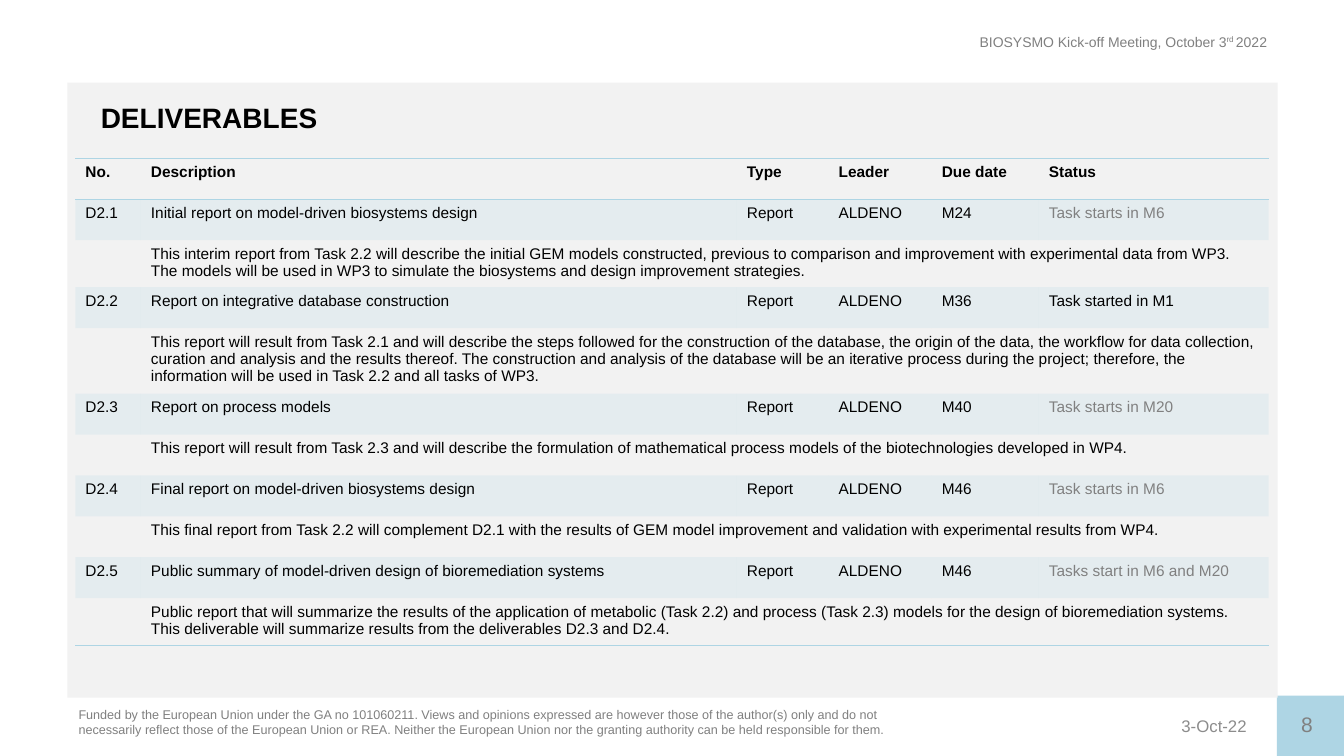
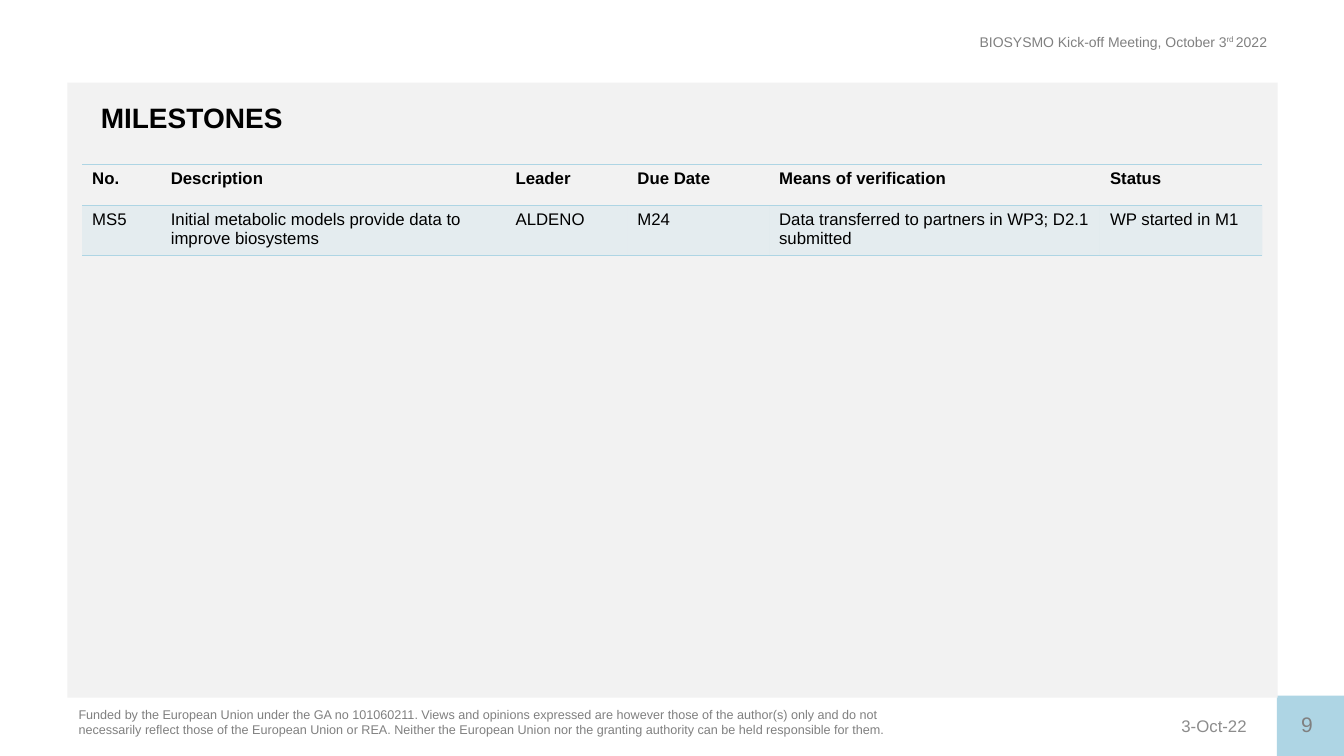
from lxml import etree
from pptx import Presentation
from pptx import util as u
from pptx.dml.color import RGBColor
from pptx.enum import shapes, text
from pptx.oxml.ns import qn

BLUE, PALE, GREY, SOFT, BLACK = "AED5E4", "F2F2F2", "808080", "8C8C8C", "000000"
FONT = "Arial"
PLAIN = "{2D5ABB26-0587-4C30-8999-92F81FD0307C}"  # table style without grid
EVENT = ("BIOSYSMO Kick-off Meeting, October 3", "rd ", "2022")
DATE = "3-Oct-22"
FUND = (
    "Funded by the European Union under the GA no 101060211. Views and opinions "
    "expressed are however those of the author(s) only and do not necessarily "
    "reflect those of the European Union or REA. Neither the European Union nor "
    "the granting authority can be held responsible for them."
)
LEAD = "ALDENO"


def tint(code):
    return RGBColor.from_string(code)


class Deck:
    def __init__(self):
        self.show = Presentation()
        self.show.slide_width = u.Cm(33.87)
        self.show.slide_height = u.Cm(19.05)
        self.slide = None

    # Shared frame: header, footer, panel, title and page number
    def page(self, title, number):
        self.slide = self.show.slides.add_slide(self.show.slide_layouts[6])
        right = text.PP_ALIGN.RIGHT
        head = self.text((20.93, 0.71, 11.25, 0.68), EVENT, 10, GREY, align=right)
        head.runs[1]._r.get_or_add_rPr().set("baseline", "30000")
        self.text((20.24, 17.78, 11.43, 1.02), [DATE], 12, SOFT, align=right,
                  anchor=text.MSO_ANCHOR.MIDDLE)
        self.rect((32.18, 17.53, 1.69, 1.54), BLUE)
        self.text((1.73, 17.68, 21.46, 1.02), [FUND], 9, GREY)
        self.rect((1.7, 2.08, 30.5, 15.5), PALE)
        self.text((2.29, 2.41, 7.59, 1.12), [title], 20, BLACK, bold=True)
        self.text((32.54, 17.81, 1.17, 0.89), [str(number)], 15, GREY, wrap=False)

    def rect(self, box, fill):
        shape = self.slide.shapes.add_shape(
            shapes.MSO_SHAPE.RECTANGLE, *map(u.Cm, box))
        shape.shadow.inherit = False
        shape.fill.solid()
        shape.fill.fore_color.rgb = tint(fill)
        shape.line.fill.background()

    def text(self, box, parts, size, color, bold=False, align=text.PP_ALIGN.LEFT,
             anchor=text.MSO_ANCHOR.TOP, wrap=True):
        frame = self.slide.shapes.add_textbox(*map(u.Cm, box)).text_frame
        frame.word_wrap = wrap
        frame.vertical_anchor = anchor
        para = frame.paragraphs[0]
        para.alignment = align
        for part in parts:
            para.add_run().text = part
        self.style(para, size, color, bold)
        return para

    def style(self, para, size, color, bold):
        for run in para.runs:
            font = run.font
            font.name, font.size, font.bold = FONT, u.Pt(size), bold
            font.color.rgb = tint(color)

    # A row with two entries spans its second one to the right edge
    def table(self, left, top, cols, rows, size, muted=()):
        high = 1.03
        frame = self.slide.shapes.add_table(
            len(rows), len(cols), u.Cm(left), u.Cm(top),
            u.Cm(sum(cols)), u.Cm(high * len(rows)))
        grid = frame.table
        grid.horz_banding = False
        grid._tbl.tblPr.find(qn("a:tableStyleId")).text = PLAIN
        for col, width in zip(grid.columns, cols):
            col.width = u.Cm(width)
        for i, row in enumerate(rows):
            grid.rows[i].height = u.Cm(high)
            full = len(row) == len(cols)
            if not full:
                grid.cell(i, 1).merge(grid.cell(i, len(cols) - 1))
            for j, words in enumerate(row):
                cell = grid.cell(i, j)
                cell.text_frame.text = words
                self.style(cell.text_frame.paragraphs[0], size,
                           GREY if words in muted else BLACK, i == 0)
            sides = ["lnT", "lnB"] if i == 0 else ["lnB"] if i == len(rows) - 1 else []
            for cell in grid.rows[i].cells:
                self.shade(cell, full and i > 0)
                self.edge(cell, sides)

    def shade(self, cell, band):
        if not band:
            cell.fill.background()
            return
        cell.fill.solid()
        cell.fill.fore_color.rgb = tint(BLUE)
        code = cell._tc.tcPr.find(qn("a:solidFill"))[0]
        etree.SubElement(code, qn("a:alpha"), val="20000")

    def edge(self, cell, sides):
        props = cell._tc.get_or_add_tcPr()
        for k, side in enumerate(sides):
            line = etree.Element(qn("a:" + side), w=str(u.Pt(1)))
            fill = etree.SubElement(line, qn("a:solidFill"))
            etree.SubElement(fill, qn("a:srgbClr"), val=BLUE)
            props.insert(k, line)


# Deliverables: title, due date, status, summary
ITEMS = [
    ("Initial report on model-driven biosystems design", "M24", "Task starts in M6",
     "This interim report from Task 2.2 will describe the initial GEM models "
     "constructed, previous to comparison and improvement with experimental data "
     "from WP3. The models will be used in WP3 to simulate the biosystems and "
     "design improvement strategies."),
    ("Report on integrative database construction", "M36", "Task started in M1",
     "This report will result from Task 2.1 and will describe the steps followed "
     "for the construction of the database, the origin of the data, the workflow "
     "for data collection, curation and analysis and the results thereof. The "
     "construction and analysis of the database will be an iterative process "
     "during the project; therefore, the information will be used in Task 2.2 and "
     "all tasks of WP3."),
    ("Report on process models", "M40", "Task starts in M20",
     "This report will result from Task 2.3 and will describe the formulation of "
     "mathematical process models of the biotechnologies developed in WP4."),
    ("Final report on model-driven biosystems design", "M46", "Task starts in M6",
     "This final report from Task 2.2 will complement D2.1 with the results of GEM "
     "model improvement and validation with experimental results from WP4."),
    ("Public summary of model-driven design of bioremediation systems", "M46",
     "Tasks start in M6 and M20",
     "Public report that will summarize the results of the application of metabolic "
     "(Task 2.2) and process (Task 2.3) models for the design of bioremediation "
     "systems. This deliverable will summarize results from the deliverables D2.3 "
     "and D2.4."),
]


def main():
    deck = Deck()

    # Deliverables
    deck.page("DELIVERABLES", 8)
    rows = [("No.", "Description", "Type", "Leader", "Due date", "Status")]
    for n, (name, due, state, note) in enumerate(ITEMS, 1):
        rows += [(f"D2.{n}", name, "Report", LEAD, due, state), ("", note)]
    muted = {item[2] for item in ITEMS if "started" not in item[2]}
    deck.table(1.9, 3.99, (1.65, 15.02, 2.31, 2.6, 2.7, 5.79), rows, 11, muted)

    # Milestones
    deck.page("MILESTONES", 9)
    rows = [
        ("No.", "Description", "Leader", "Due Date", "Means of verification", "Status"),
        ("MS5", "Initial metabolic models provide data to improve biosystems", LEAD,
         "M24", "Data transferred to partners in WP3; D2.1 submitted",
         "WP started in M1"),
    ]
    deck.table(2.07, 4.14, (1.98, 8.69, 3.07, 3.57, 8.34, 4.09), rows, 12)

    deck.show.save("out.pptx")


if __name__ == "__main__":
    main()
